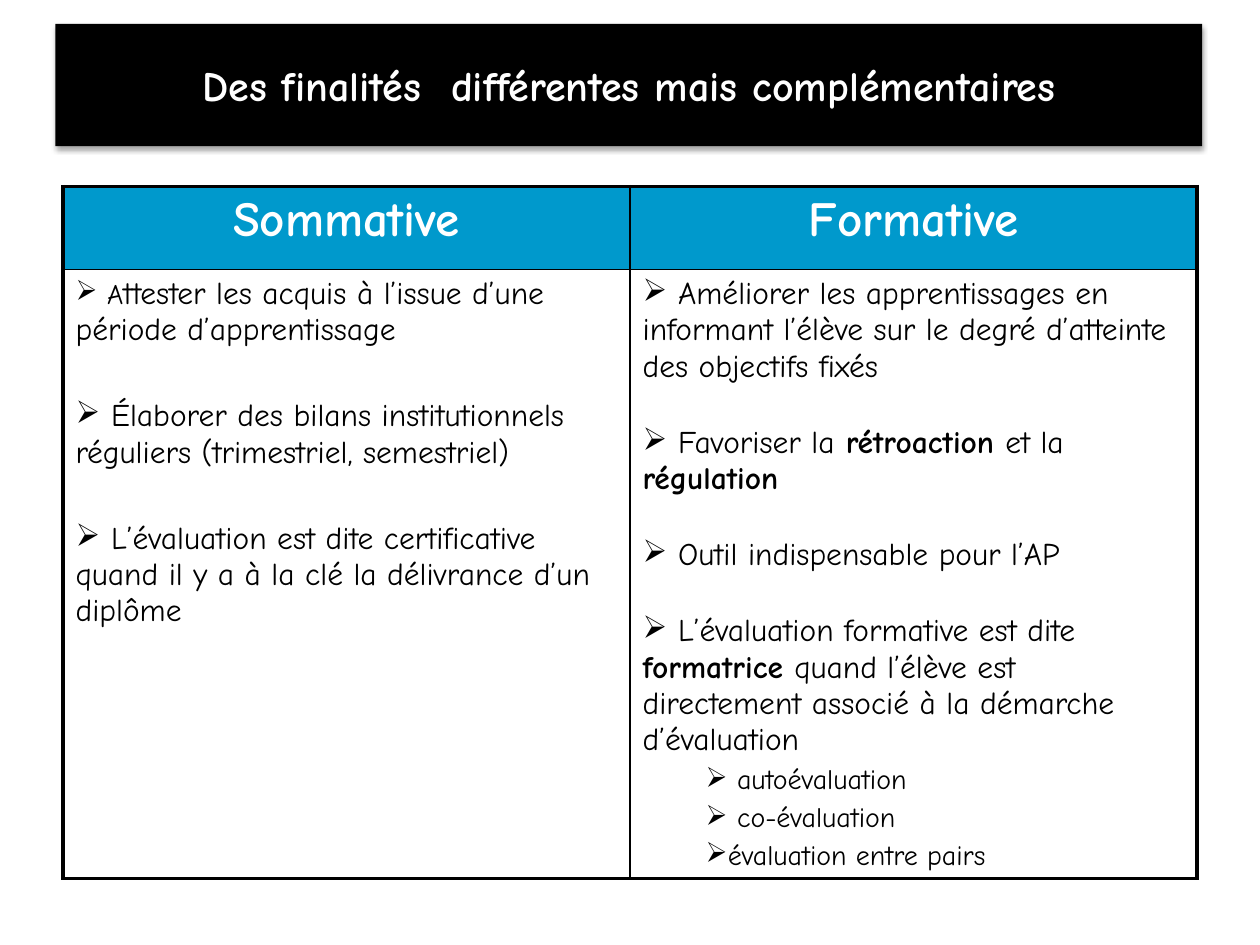
from dataclasses import dataclass

from lxml.etree import SubElement
from pptx import Presentation
from pptx.dml.color import RGBColor
from pptx.enum.text import MSO_VERTICAL_ANCHOR as Anchor, PP_PARAGRAPH_ALIGNMENT as Align
from pptx.oxml import parse_xml
from pptx.oxml.ns import nsdecls, qn
from pptx.util import Inches, Pt

COLORS = {"black": "000000", "white": "FFFFFF", "header": "0099CC"}
FONT = "Comic Neue"
BULLET = "➢"
OUTER, INNER = 2.25, 1  # border widths in points
TITLE_FORMAT = {"name": FONT, "size": Pt(24), "bold": True}
HEADER_FORMAT = {"name": FONT, "size": Pt(28), "bold": True}


@dataclass
class Span:
    text: str
    bold: bool = False
    size: int = 18


@dataclass
class Item:
    spans: list[Span]
    gap: float = 0  # points above the paragraph
    level: int = 0


@dataclass
class Column:
    heading: str
    items: list[Item]


def sub_item(text: str) -> Item:
    return Item([Span(text, size=16)], gap=3.3, level=1)


LEFT_GAP, RIGHT_GAP = 28.4, 22.7
COLUMNS = [
    Column("Sommative", [
        Item([Span(" A", size=16),
              Span("ttester les acquis à l’issue d’une période d’apprentissage")]),
        Item([Span(" Élaborer des bilans institutionnels réguliers (trimestriel, semestriel)")],
             LEFT_GAP),
        Item([Span(" L’évaluation est dite certificative quand il y a à la clé "
                   "la délivrance d’un diplôme")], LEFT_GAP),
    ]),
    Column("Formative", [
        Item([Span(" Améliorer les apprentissages en informant l’élève sur le degré "
                   "d’atteinte des objectifs fixés")]),
        Item([Span(" Favoriser la"), Span(" rétroaction ", True),
              Span("et la "), Span("régulation", True)], RIGHT_GAP),
        Item([Span(" Outil indispensable pour l’AP")], RIGHT_GAP),
        Item([Span(" L’évaluation formative est dite "), Span("formatrice ", True),
              Span("quand l’élève est directement associé à la démarche d’évaluation")],
             RIGHT_GAP),
        sub_item(" autoévaluation"),
        sub_item(" co-évaluation"),
        sub_item("évaluation entre pairs"),
    ]),
]


def rgb(name: str) -> RGBColor:
    return RGBColor.from_string(COLORS[name])


def write_span(para, text: str, color: str, values: dict) -> None:
    span = para.add_run()
    span.text = text
    for name, value in values.items():
        setattr(span.font, name, value)
    span.font.color.rgb = rgb(color)


def write_item(para, item: Item) -> None:
    para.level = item.level
    para.space_before = Pt(item.gap)
    properties = para._p.get_or_add_pPr()
    properties.set("marL", str(Inches(0.5 * item.level)))
    properties.set("indent", "0")
    SubElement(properties, qn("a:buChar")).set("char", BULLET)
    for span in item.spans:
        write_span(para, span.text, "black",
                   {"name": FONT, "size": Pt(span.size), "bold": span.bold})


def set_borders(cell, widths: dict[str, float]) -> None:
    properties = cell._tc.get_or_add_tcPr()
    for place, (side, width) in enumerate(widths.items()):
        properties.insert(place, parse_xml(
            f'<a:ln{side} {nsdecls("a")} w="{Pt(width)}"><a:solidFill>'
            f'<a:srgbClr val="{COLORS["black"]}"/></a:solidFill></a:ln{side}>'))


def add_title(page, text: str) -> None:
    box = page.shapes.title
    box.left, box.top, box.width, box.height = map(Inches, (0.44, 0.19, 9.1, 0.97))
    box.fill.solid()
    box.fill.fore_color.rgb = rgb("black")
    box._element.spPr.append(parse_xml(
        f'<a:effectLst {nsdecls("a")}><a:outerShdw blurRad="{Pt(3.1)}" dist="{Pt(1.8)}" '
        f'dir="5400000" rotWithShape="0"><a:srgbClr val="{COLORS["black"]}">'
        '<a:alpha val="35000"/></a:srgbClr></a:outerShdw></a:effectLst>'))
    box.text_frame.vertical_anchor = Anchor.MIDDLE
    para = box.text_frame.paragraphs[0]
    para.alignment = Align.CENTER
    write_span(para, text, "white", TITLE_FORMAT)


def add_comparison(page, columns: list[Column]) -> None:
    heights = [Inches(0.66), Inches(4.82)]
    table = page.shapes.add_table(2, len(columns), Inches(0.5), Inches(1.48),
                                  Inches(9), sum(heights)).table
    table.first_row = table.horz_banding = False
    for row, height in zip(table.rows, heights):
        row.height = height

    last = len(columns) - 1
    for index, column in enumerate(columns):
        table.columns[index].width = Inches(9 / len(columns))
        header, body = table.cell(0, index), table.cell(1, index)

        # Heading cell
        header.fill.solid()
        header.fill.fore_color.rgb = rgb("header")
        para = header.text_frame.paragraphs[0]
        para.alignment = Align.CENTER
        write_span(para, column.heading, "white", HEADER_FORMAT)

        # Bulleted cell
        body.fill.background()
        for number, item in enumerate(column.items):
            frame = body.text_frame
            write_item(frame.add_paragraph() if number else frame.paragraphs[0], item)

        # Thick frame, thin inner lines
        sides = {"L": INNER if index else OUTER, "R": OUTER if index == last else INNER}
        set_borders(header, {**sides, "T": OUTER, "B": INNER})
        set_borders(body, {**sides, "T": INNER, "B": OUTER})


def main() -> None:
    deck = Presentation()
    deck.slide_width, deck.slide_height = Inches(10), Inches(7.5)
    page = deck.slides.add_slide(deck.slide_layouts[5])
    add_title(page, "Des finalités  différentes mais complémentaires")
    add_comparison(page, COLUMNS)
    deck.save("out.pptx")


if __name__ == "__main__":
    main()
